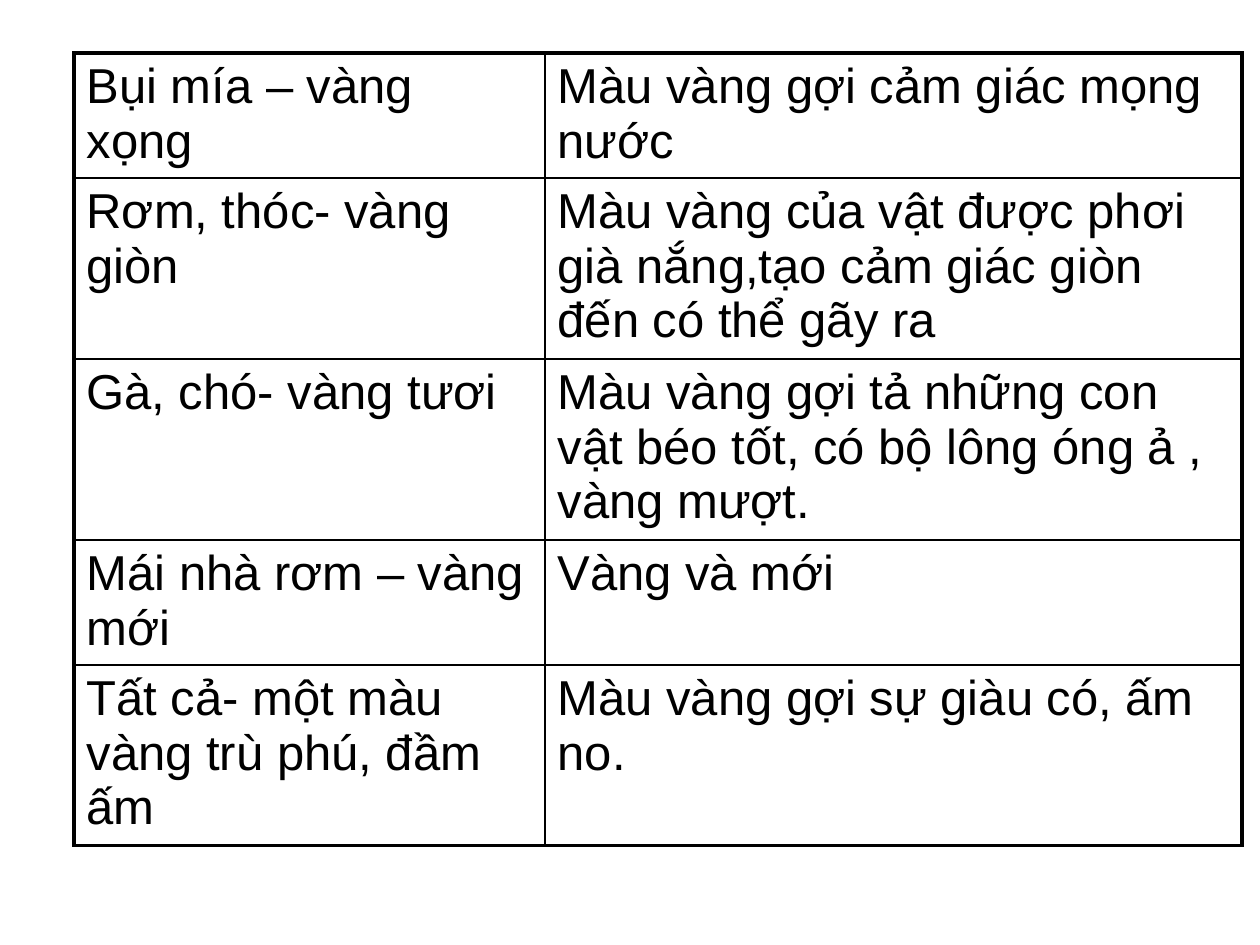
import pptx
import pptx.dml.color
import pptx.oxml
import pptx.oxml.ns
import pptx.util

EMU_PER_PX = 914400 // 126
BLACK = "000000"
THIN, THICK = 1, 2.25
COLUMN_WIDTHS = [471, 697]
ROWS = [
    (125, "Bụi mía – vàng xọng", "Màu vàng gợi cảm giác mọng nước"),
    (181, "Rơm, thóc- vàng giòn",
     "Màu vàng của vật được phơi già nắng,tạo cảm giác giòn đến có thể gãy ra"),
    (181, "Gà, chó- vàng tươi",
     "Màu vàng gợi tả những con vật béo tốt, có bộ lông óng ả , vàng mượt."),
    (125, "Mái nhà rơm – vàng mới", "Vàng và mới"),
    (181, "Tất cả- một màu vàng trù phú, đầm ấm",
     "Màu vàng gợi sự giàu có, ấm no."),
]
TEXT_FORMAT = {"name": "Arial", "size": pptx.util.Pt(28), "bold": False}


def px(length):
    return pptx.util.Emu(length * EMU_PER_PX)


def color(hex_string):
    return pptx.dml.color.RGBColor.from_string(hex_string)


def set_borders(cell, widths):
    """Draw solid borders from a dict of side letter (L, R, T, B) to points."""
    properties = cell._tc.get_or_add_tcPr()
    for side, width in widths.items():
        properties.append(pptx.oxml.parse_xml(
            f'<a:ln{side} {pptx.oxml.ns.nsdecls("a")} w="{pptx.util.Pt(width)}">'
            f'<a:solidFill><a:srgbClr val="{BLACK}"/></a:solidFill>'
            f'</a:ln{side}>'))


def write_cell(cell, text):
    cell.text = text
    font = cell.text_frame.paragraphs[0].runs[0].font
    for attribute, value in TEXT_FORMAT.items():
        setattr(font, attribute, value)
    font.color.rgb = color(BLACK)


def add_color_table(slide):
    """Add the table of yellow shades, with a thick outer frame."""
    last_row, last_column = len(ROWS) - 1, len(COLUMN_WIDTHS) - 1
    table = slide.shapes.add_table(
        len(ROWS), len(COLUMN_WIDTHS), px(74), px(53),
        px(sum(COLUMN_WIDTHS)), px(sum(row[0] for row in ROWS))).table
    table.first_row = table.horz_banding = False
    for column, width in zip(table.columns, COLUMN_WIDTHS):
        column.width = px(width)
    for row_index, (height, *texts) in enumerate(ROWS):
        table.rows[row_index].height = px(height)
        for column_index, text in enumerate(texts):
            cell = table.cell(row_index, column_index)
            write_cell(cell, text)
            set_borders(cell, {
                "L": THICK if column_index == 0 else THIN,
                "R": THICK if column_index == last_column else THIN,
                "T": THICK if row_index == 0 else THIN,
                "B": THICK if row_index == last_row else THIN,
            })
            cell.fill.background()


def main():
    presentation = pptx.Presentation()
    presentation.slide_width = px(1260)
    presentation.slide_height = px(945)
    slide = presentation.slides.add_slide(presentation.slide_layouts[6])
    add_color_table(slide)
    presentation.save("out.pptx")


if __name__ == "__main__":
    main()
